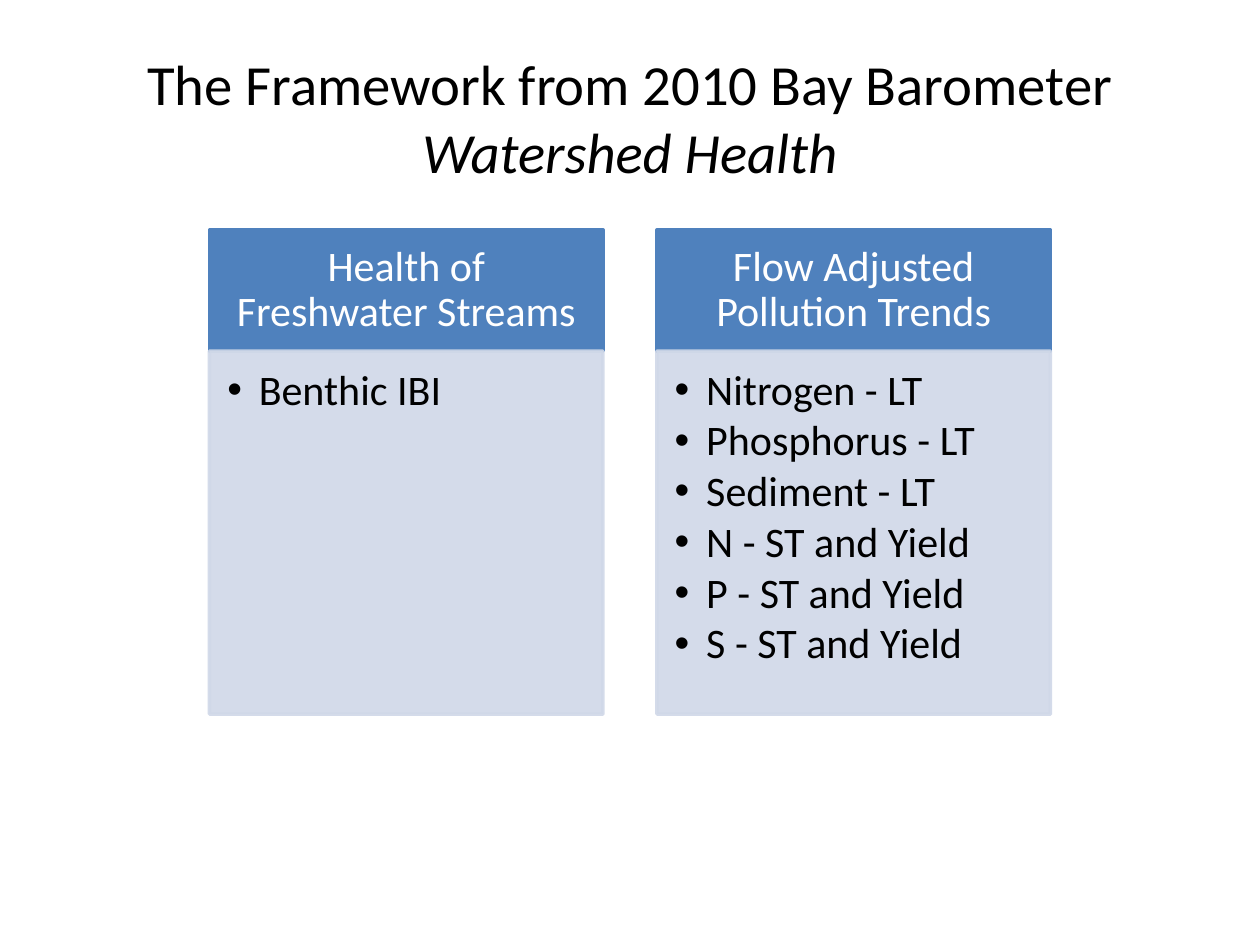
"""Build the Watershed Health framework slide with two headed list cards."""
from lxml import etree
from pptx import Presentation
from pptx.dml.color import RGBColor
from pptx.enum.shapes import MSO_SHAPE
from pptx.enum.text import MSO_ANCHOR, MSO_AUTO_SIZE, PP_ALIGN
from pptx.oxml.ns import qn
from pptx.util import Pt

RECT = MSO_SHAPE.RECTANGLE
TOP, MIDDLE = MSO_ANCHOR.TOP, MSO_ANCHOR.MIDDLE
LEFT, CENTER = PP_ALIGN.LEFT, PP_ALIGN.CENTER

TITLE = [("The Framework from 2010 Bay Barometer", False),
         ("Watershed Health", True)]
CARDS = [
    ("Health of Freshwater Streams", ["Benthic IBI"]),
    ("Flow Adjusted Pollution Trends",
     ["Nitrogen - LT", "Phosphorus - LT", "Sediment - LT",
      "N - ST and Yield", "P - ST and Yield", "S - ST and Yield"]),
]
THEME = {"font": "Calibri", "title": 32.4, "text": 24, "ink": "000000",
         "header": "4F81BD", "header_ink": "FFFFFF", "panel": "D0D8E8"}
SLIDE_W, SLIDE_H = 720, 540
CARD_W, GAP, CARD_TOP = 224.9, 30.8, 131.5
HEADER_H, PANEL_H = 69.1, 207.5
INDENT = 18


def write(tf, paragraphs, size, color, align=LEFT, anchor=TOP,
          insets=(7.2, 3.6, 7.2, 3.6), spacing=None, after=0, bullet=False):
    """Fill a text frame; each paragraph is a list of (line, italic) pairs."""
    tf.word_wrap, tf.auto_size, tf.vertical_anchor = True, MSO_AUTO_SIZE.NONE, anchor
    tf.margin_left, tf.margin_top, tf.margin_right, tf.margin_bottom = map(Pt, insets)
    for i, lines in enumerate(paragraphs):
        p = tf.add_paragraph() if i else tf.paragraphs[0]
        p.alignment, p.line_spacing, p.space_after = align, spacing, Pt(after)
        if bullet:
            pPr = p._p.get_or_add_pPr()
            pPr.set("marL", str(Pt(INDENT)))
            pPr.set("indent", str(-Pt(INDENT)))
            etree.SubElement(pPr, qn("a:buFont")).set("typeface", "Arial")
            etree.SubElement(pPr, qn("a:buChar")).set("char", "•")
        for j, (text, italic) in enumerate(lines):
            if j:
                p.add_line_break()
            r = p.add_run()
            r.text = text
            r.font.name, r.font.size, r.font.italic = THEME["font"], Pt(size), italic
            r.font.color.rgb = RGBColor.from_string(color)


def add_box(slide, x, y, h, color, opacity=100):
    """Add a card part whose fill and outline share one colour."""
    s = slide.shapes.add_shape(RECT, Pt(x), Pt(y), Pt(CARD_W), Pt(h))
    s.shadow.inherit = False
    s.line.width = Pt(2)
    s.fill.solid()
    for paint in (s.fill, s.line.fill):
        paint.solid()
        paint.fore_color.rgb = RGBColor.from_string(color)
    if opacity < 100:
        for clr in s._element.spPr.iter(qn("a:srgbClr")):
            etree.SubElement(clr, qn("a:alpha")).set("val", str(opacity * 1000))
    return s


def main():
    """Lay out the title and the centred row of cards."""
    prs = Presentation()
    prs.slide_width, prs.slide_height = Pt(SLIDE_W), Pt(SLIDE_H)
    slide = prs.slides.add_slide(prs.slide_layouts[5])
    title = slide.shapes.title
    title.left, title.top, title.width, title.height = map(Pt, (36, 21.6, 648, 90))
    write(title.text_frame, [TITLE], THEME["title"], THEME["ink"],
          align=CENTER, anchor=MIDDLE)

    row_w = len(CARDS) * (CARD_W + GAP) - GAP
    for i, (heading, items) in enumerate(CARDS):
        x = (SLIDE_W - row_w) / 2 + i * (CARD_W + GAP)
        header = add_box(slide, x, CARD_TOP, HEADER_H, THEME["header"])
        write(header.text_frame, [[(heading, False)]], THEME["text"],
              THEME["header_ink"], align=CENTER, anchor=MIDDLE,
              insets=(13.6, 7.8, 13.6, 7.8), spacing=0.9)
        panel = add_box(slide, x, CARD_TOP + HEADER_H, PANEL_H, THEME["panel"], 90)
        write(panel.text_frame, [[(item, False)] for item in items], THEME["text"],
              THEME["ink"], insets=(10.2, 10.2, 13.6, 15.3), spacing=0.9,
              after=3.1, bullet=True)
    prs.save("out.pptx")


if __name__ == "__main__":
    main()
